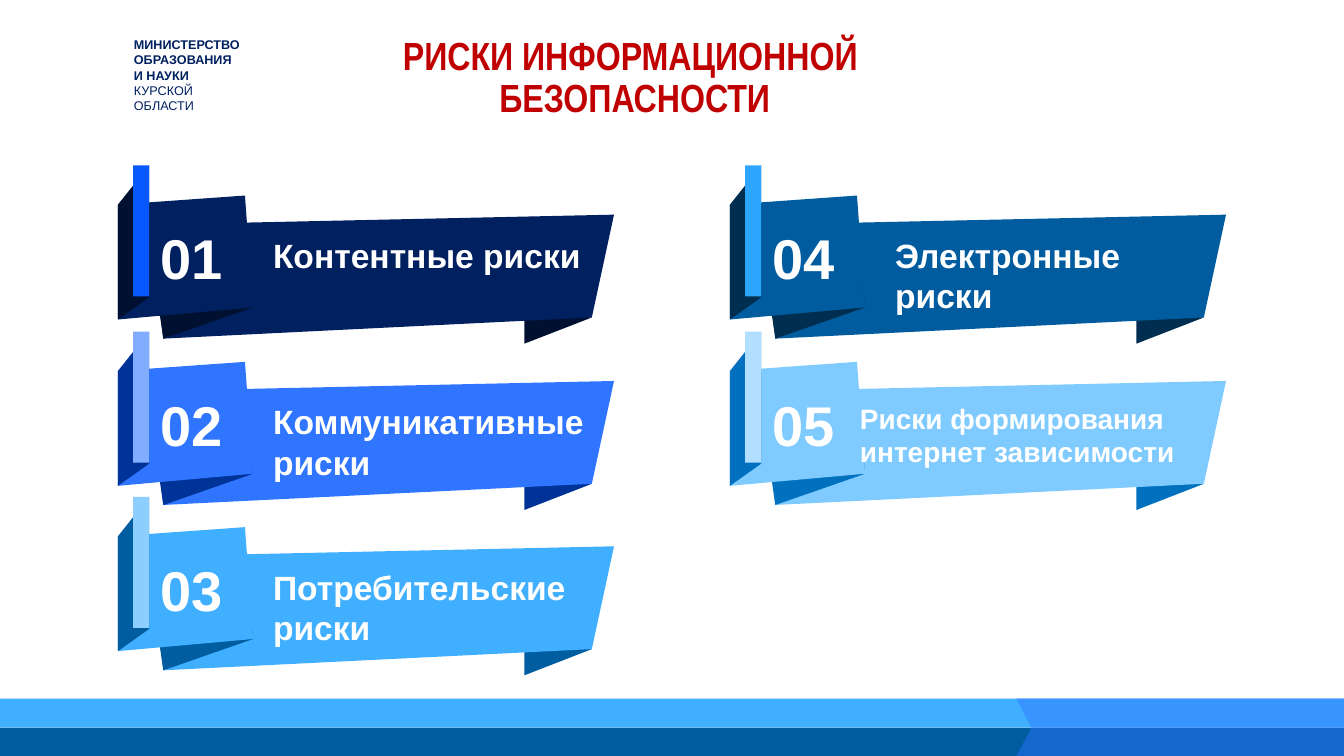
from dataclasses import dataclass

import pptx
import pptx.dml.color
import pptx.enum.text
import pptx.util
from lxml import etree
from pptx.enum.shapes import MSO_SHAPE
from pptx.enum.text import MSO_ANCHOR, MSO_AUTO_SIZE, PP_ALIGN
from pptx.oxml.ns import qn
from pptx.util import Inches

Points = list[tuple[float, float]]

COLUMNS = (1.17, 7.24)
ROWS = (1.64, 3.29, 4.93)

# Ribbon outlines, in inches from the ribbon's top left corner
TAIL: Points = [(4.7, 1.51), (4.03, 1.77), (4.03, 1.46)]
BODY: Points = [(4.7, 1.51), (0.45, 1.72), (0.31, 0.59), (4.92, 0.49)]
FOLD: Points = [(0.45, 1.72), (1.34, 1.41), (1.26, 0.57), (0.36, 1.1)]
PLATE: Points = [(1.34, 1.41), (1.26, 0.3), (0, 0.39), (0, 1.53)]
SIDE: Points = [(0, 0.39), (0.31, 0), (0.31, 1.31), (0, 1.53)]
CHEVRON: Points = [(0, 0), (3.25, 0), (3.25, 0.57), (0, 0.57), (0.15, 0.29)]


@dataclass
class Risk:
    label: str
    column: int
    row: int
    main: str
    dark: str
    bar: str
    label_left: float
    label_width: float
    label_height: float = 1.01
    size: int = 24


RISKS = [
    Risk("Контентные риски", 0, 0, "002060", "001030", "0759FF", 2.61, 3.6, 0.61),
    Risk("Коммуникативные\nриски", 0, 1, "2F75FF", "003397", "82ACFF", 2.61, 3.48),
    Risk("Потребительские риски", 0, 2, "40AFFF", "005DA0", "8CCFFF", 2.61, 4.06),
    Risk("Электронные риски", 1, 0, "005C9F", "002E50", "2CA6FF", 8.78, 3.26),
    Risk("Риски формирования интернет зависимости", 1, 1, "7FCAFF", "0070BF",
         "B2DFFF", 8.43, 3.89, 0.88, 20),
]


def rgb(value: str) -> pptx.dml.color.RGBColor:
    return pptx.dml.color.RGBColor.from_string(value)


def paint(sp, color: str):
    sp.shadow.inherit = False
    sp.fill.solid()
    sp.fill.fore_color.rgb = rgb(color)
    sp.line.fill.background()
    return sp


def add_outline(s, left: float, top: float, points: Points, color: str):
    corners = [(Inches(left + x), Inches(top + y)) for x, y in points]
    builder = s.shapes.build_freeform(*corners[0])
    builder.add_line_segments(corners[1:], close=True)
    return paint(builder.convert_to_shape(), color)


def add_rect(s, left: float, top: float, width: float, height: float, color: str):
    return paint(s.shapes.add_shape(MSO_SHAPE.RECTANGLE, Inches(left), Inches(top),
                                    Inches(width), Inches(height)), color)


def format_text(tf, size: int, color: str, align=PP_ALIGN.LEFT, name: str = "Arial") -> None:
    for p in tf.paragraphs:
        p.alignment = align
        p.font.name = name
        p.font.size = pptx.util.Pt(size)
        p.font.bold = True
        p.font.color.rgb = rgb(color)


def add_text(s, text: str, left: float, top: float, width: float, height: float,
             size: int, color: str):
    tf = s.shapes.add_textbox(Inches(left), Inches(top),
                              Inches(width), Inches(height)).text_frame
    tf.word_wrap = True
    tf.auto_size = MSO_AUTO_SIZE.SHAPE_TO_FIT_TEXT
    tf.text = text
    format_text(tf, size, color)
    return tf


def add_title(s) -> None:
    title = s.shapes.title
    title.left, title.top = Inches(2.51), Inches(0.31)
    title.width, title.height = Inches(7.57), Inches(1.24)
    tf = title.text_frame
    tf.text = "РИСКИ ИНФОРМАЦИОННОЙ \nБЕЗОПАСНОСТИ"
    tf.vertical_anchor = MSO_ANCHOR.TOP
    tf.auto_size = MSO_AUTO_SIZE.NONE
    format_text(tf, 28, "C00000", PP_ALIGN.CENTER, "Arial Narrow")
    for p in tf.paragraphs:
        p.line_spacing = 0.9


def add_ribbon(s, number: int, risk: Risk) -> None:
    left, top = COLUMNS[risk.column], ROWS[risk.row]
    add_outline(s, left, top, TAIL, risk.dark)
    add_outline(s, left, top, BODY, risk.main)
    add_outline(s, left, top, FOLD, risk.dark)
    plate = add_outline(s, left, top, PLATE, risk.main)
    add_outline(s, left, top, SIDE, risk.dark)
    add_rect(s, left + 0.15, top, 0.16, 1.3, risk.bar)

    tf = plate.text_frame
    tf.text = f"{number:02}"
    tf.vertical_anchor = MSO_ANCHOR.MIDDLE
    tf.margin_right = Inches(0.3)
    format_text(tf, 40, "FFFFFF", PP_ALIGN.RIGHT)

    tf = add_text(s, risk.label, risk.label_left, top + 0.49, risk.label_width,
                  risk.label_height, risk.size, "FFFFFF")
    tf.margin_top, tf.margin_bottom = Inches(0.2), 0


def add_footer(s) -> None:
    add_rect(s, 0, 6.93, 13.33, 0.29, "40AFFF")
    add_rect(s, 0, 7.22, 13.33, 0.28, "005C9F")
    chevron = add_outline(s, 10.08, 6.93, CHEVRON, "2F75FF")
    color = chevron.fill._xPr.find(qn("a:solidFill"))[0]
    etree.SubElement(color, qn("a:alpha"), val="46000")


def main() -> None:
    prs = pptx.Presentation()
    prs.slide_width, prs.slide_height = Inches(13.33), Inches(7.5)
    s = prs.slides.add_slide(prs.slide_layouts[5])
    add_title(s)
    ministry = add_text(s, "МИНИСТЕРСТВО\nОБРАЗОВАНИЯ\nИ НАУКИ\nКУРСКОЙ\nОБЛАСТИ",
                        1.23, 0.32, 1.55, 0.86, 9, "002060")
    for p in ministry.paragraphs[3:]:
        p.font.bold = False
    for number, risk in enumerate(RISKS, 1):
        add_ribbon(s, number, risk)
    add_footer(s)
    prs.save("out.pptx")


if __name__ == "__main__":
    main()
